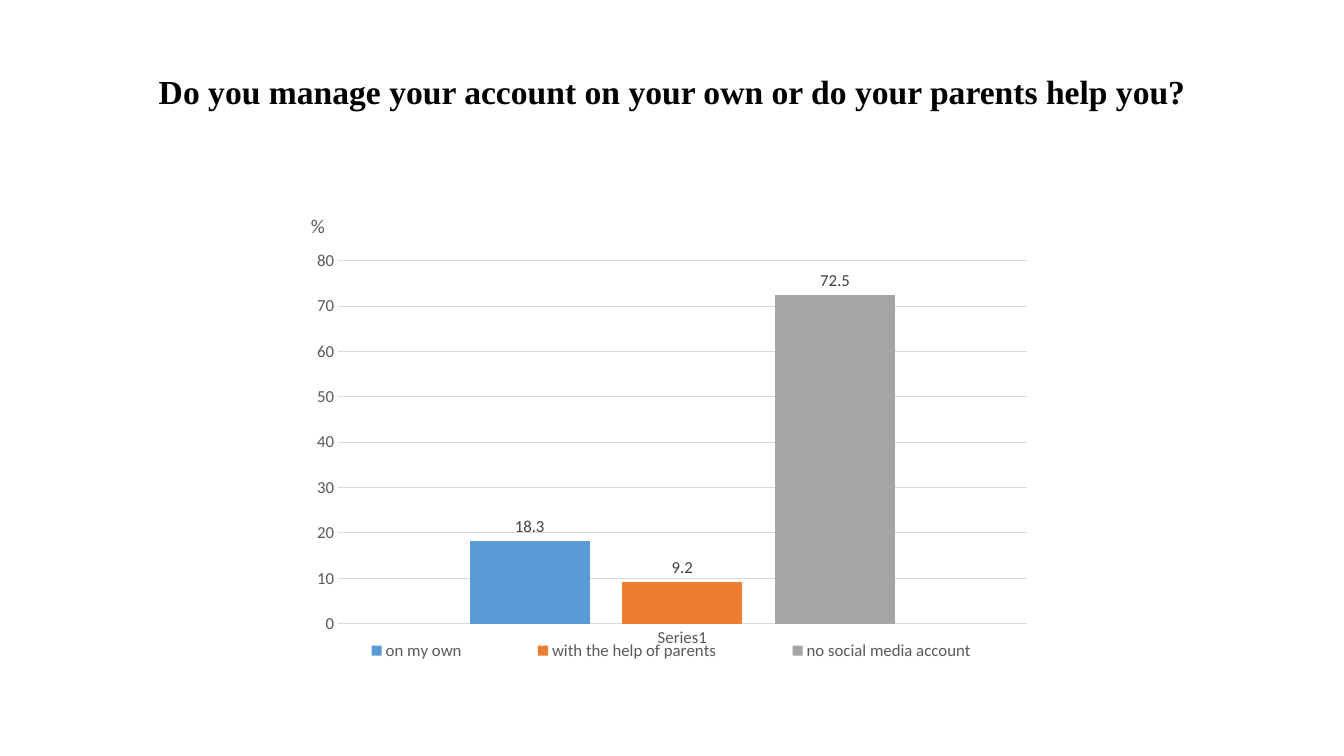
from lxml import etree
from pptx import Presentation
from pptx.chart.data import CategoryChartData
from pptx.dml.color import RGBColor
from pptx.enum import chart as ch, text
from pptx.oxml import ns
from pptx.util import Pt

SERIES = [
    ("on my own", 18.3, "5B9BD5"),
    ("with the help of parents", 9.2, "ED7D31"),
    ("no social media account", 72.5, "A5A5A5"),
]
GREY, GRID = "595959", "D9D9D9"


def color(value):
    return RGBColor.from_string(value)


def set_attrs(obj, values):
    for name, value in values.items():
        setattr(obj, name, value)


def set_font(font, size, hex_color, name="Calibri", bold=False):
    set_attrs(font, {"size": Pt(size), "name": name, "bold": bold})
    font.color.rgb = color(hex_color)


def place(sp, box):
    set_attrs(sp, dict(zip(("left", "top", "width", "height"), map(Pt, box))))


def set_layout(parent, after, fractions, inner=False):
    for old in parent.findall(ns.qn("c:layout")):
        parent.remove(old)
    layout = etree.Element(ns.qn("c:layout"))
    manual = etree.SubElement(layout, ns.qn("c:manualLayout"))
    values = {"layoutTarget": "inner"} if inner else {}
    values |= {"xMode": "edge", "yMode": "edge"}
    values |= dict(zip("xywh", fractions))
    for tag, value in values.items():
        etree.SubElement(manual, ns.qn(f"c:{tag}")).set("val", str(value))
    if after is None:
        parent.insert(0, layout)
    else:
        after.addnext(layout)


def add_title(slide, box):
    sp = slide.shapes.title
    place(sp, box)
    tf = sp.text_frame
    set_attrs(tf, {"word_wrap": True, "vertical_anchor": text.MSO_ANCHOR.MIDDLE})
    p = tf.paragraphs[0]
    p.alignment = text.PP_ALIGN.CENTER
    r = p.add_run()
    r.text = "Do you manage your account on your own or do your parents help you?"
    set_font(r.font, 24, "000000", "Times New Roman", True)


def style_axes(chart):
    for axis in (chart.category_axis, chart.value_axis):
        set_attrs(axis, {"major_tick_mark": ch.XL_TICK_MARK.NONE,
                         "minor_tick_mark": ch.XL_TICK_MARK.NONE})
        set_font(axis.tick_labels.font, 12, GREY)
    axis = chart.value_axis
    set_attrs(axis, {"minimum_scale": 0, "maximum_scale": 80, "major_unit": 10})
    axis.format.line.fill.background()
    for line in (chart.category_axis.format.line, axis.major_gridlines.format.line):
        line.color.rgb = color(GRID)
        line.width = Pt(0.75)


def style_series(plot):
    set_attrs(plot, {"gap_width": 219, "overlap": -27, "vary_by_categories": False})
    for series, (_, _, fill) in zip(plot.series, SERIES):
        series.format.fill.solid()
        series.format.fill.fore_color.rgb = color(fill)
        labels = series.data_labels
        set_attrs(labels, {"show_value": True,
                           "position": ch.XL_LABEL_POSITION.OUTSIDE_END})
        set_font(labels.font, 12, "404040")


def add_answers_chart(slide, box):
    left, top, width, height = box
    data = CategoryChartData()
    data.categories = ["Series1"]
    for name, value, _ in SERIES:
        data.add_series(name, [value])
    chart = slide.shapes.add_chart(
        ch.XL_CHART_TYPE.COLUMN_CLUSTERED, *map(Pt, box), data).chart
    set_attrs(chart, {"has_title": False, "has_legend": True})
    set_font(chart.font, 10, "000000")
    style_axes(chart)
    style_series(chart.plots[0])
    legend = chart.legend
    set_attrs(legend, {"position": ch.XL_LEGEND_POSITION.BOTTOM,
                       "include_in_layout": False})
    set_font(legend.font, 12, GREY)
    legend_xml = legend._element
    set_layout(legend_xml, legend_xml.find(ns.qn("c:legendPos")), (0, 0.87, 1, 0.08))
    plot_area = chart._chartSpace.chart.plotArea
    set_layout(plot_area, None, (0.05, 0.04, 0.93, 0.81), True)

    sp = slide.shapes.add_textbox(*map(Pt, (left, top - 24, 17, 24)))
    tf = sp.text_frame
    tf.word_wrap = False
    r = tf.paragraphs[0].add_run()
    r.text = "%"
    set_font(r.font, 14, GREY)


def main():
    prs = Presentation()
    set_attrs(prs, {"slide_width": Pt(960), "slide_height": Pt(540)})
    slide = prs.slides.add_slide(prs.slide_layouts[5])
    add_title(slide, (75, 47, 810, 36))
    add_answers_chart(slide, (215, 173.5, 529, 320))
    prs.save("out.pptx")


if __name__ == "__main__":
    main()
